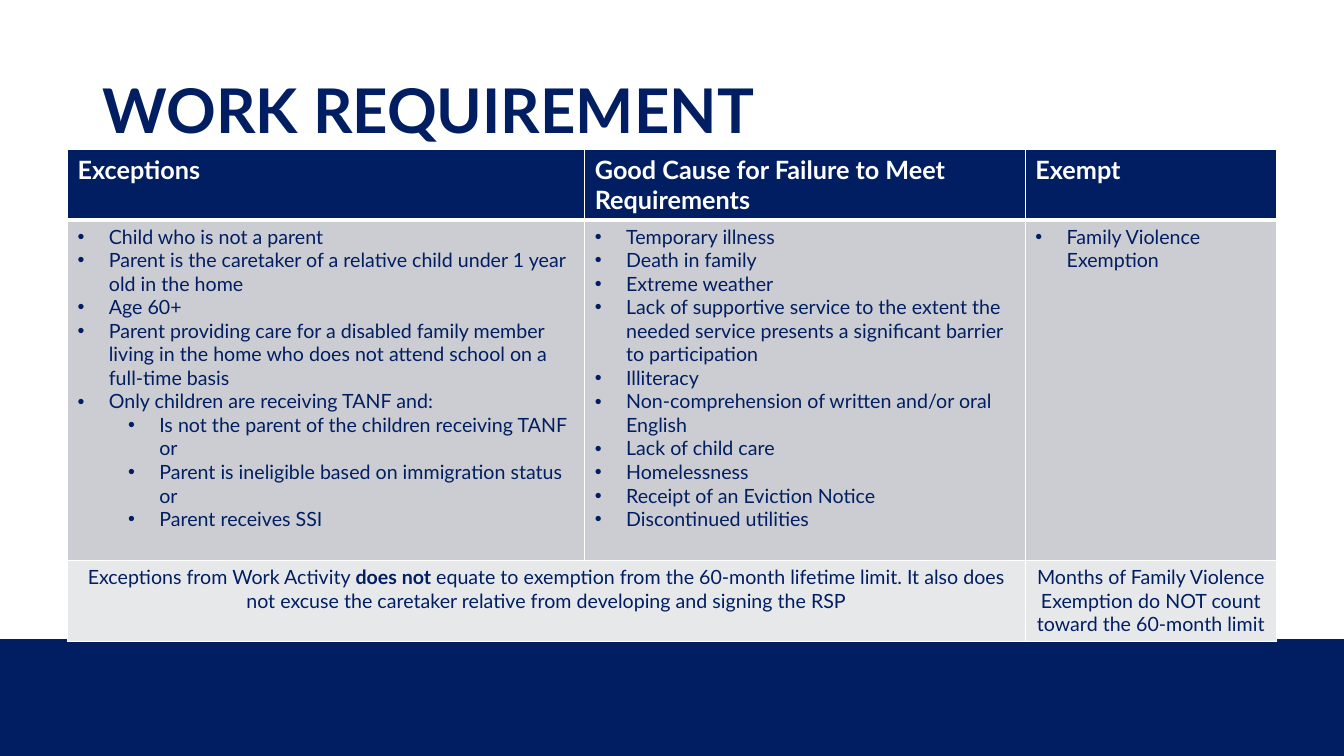
from lxml.etree import SubElement
from pptx import Presentation
from pptx.dml.color import RGBColor
from pptx.enum.shapes import MSO_SHAPE as Shape
from pptx.enum.text import MSO_ANCHOR as Anchor, PP_ALIGN as Align
from pptx.oxml.ns import qn
from pptx.util import Inches, Pt

COLORS = {"navy": "001E61", "white": "FFFFFF", "body": "CCCDD2", "note": "E7E8EA"}
FONT = "Lato"
WIDTH, HEIGHT = 13.33, 7.5
BAND_TOP = 6.34
TABLE_LEFT, TABLE_TOP = 0.67, 1.48
COLUMNS = [5.13, 4.37, 2.49]
ROWS = [0.69, 3.38, 0.8]
BULLET_INDENT, LEVEL_STEP = 0.31, 0.5

HEADINGS = ["Exceptions", "Good Cause for Failure to Meet Requirements", "Exempt"]
# Each item is a pair of level and text.
EXCEPTIONS = [
    (0, "Child who is not a parent"),
    (0, "Parent is the caretaker of a relative child under 1 year old in the home"),
    (0, "Age 60+"),
    (0, "Parent providing care for a disabled family member living in the home "
        "who does not attend school on a full-time basis"),
    (0, "Only children are receiving TANF and:"),
    (1, "Is not the parent of the children receiving TANF or"),
    (1, "Parent is ineligible based on immigration status or"),
    (1, "Parent receives SSI"),
]
GOOD_CAUSES = [(0, cause) for cause in (
    "Temporary illness",
    "Death in family",
    "Extreme weather",
    "Lack of supportive service to the extent the needed service presents "
    "a significant barrier to participation",
    "Illiteracy",
    "Non-comprehension of written and/or oral English",
    "Lack of child care",
    "Homelessness",
    "Receipt of an Eviction Notice",
    "Discontinued utilities",
)]
EXEMPTIONS = [(0, "Family Violence Exemption")]
# Each span is a pair of text and bold.
LIMIT_NOTE = [
    ("Exceptions from Work Activity ", False),
    ("does not ", True),
    ("equate to exemption from the 60-month lifetime limit. It also does not "
     "excuse the caretaker relative from developing and signing the RSP", False),
]
VIOLENCE_NOTE = [
    ("Months of Family Violence Exemption do NOT count toward the 60-month limit", False),
]


def color(name):
    return RGBColor.from_string(COLORS[name])


def add_span(para, text, size=14, ink="navy", bold=False):
    span = para.add_run()
    span.text = text
    font = span.font
    font.name, font.size, font.bold = FONT, Pt(size), bold
    font.color.rgb = color(ink)


def add_bullet(para, level):
    para.level = level
    props = para._p.get_or_add_pPr()
    props.set("marL", str(Inches(BULLET_INDENT + level * LEVEL_STEP)))
    props.set("indent", str(Inches(-BULLET_INDENT)))
    SubElement(props, qn("a:buFont"), typeface="Arial")
    SubElement(props, qn("a:buChar"), char="•")


def style_cell(cell, fill, top=1, bottom=1):
    """Give the cell white borders, in points, and a solid fill."""
    props = cell._tc.get_or_add_tcPr()
    for side, points in (("L", 1), ("R", 1), ("T", top), ("B", bottom)):
        line = SubElement(props, qn(f"a:ln{side}"), w=str(Pt(points)))
        paint = SubElement(line, qn("a:solidFill"))
        SubElement(paint, qn("a:srgbClr"), val=COLORS["white"])
    cell.fill.solid()
    cell.fill.fore_color.rgb = color(fill)


def fill_list(cell, items):
    frame = cell.text_frame
    for index, (level, text) in enumerate(items):
        para = frame.add_paragraph() if index else frame.paragraphs[0]
        add_bullet(para, level)
        add_span(para, text)


def fill_note(cell, spans):
    para = cell.text_frame.paragraphs[0]
    para.alignment = Align.CENTER
    for text, bold in spans:
        add_span(para, text, bold=bold)


def add_band(page):
    band = page.shapes.add_shape(Shape.RECTANGLE, 0, Inches(BAND_TOP),
                                 Inches(WIDTH), Inches(HEIGHT - BAND_TOP))
    band.shadow.inherit = False
    band.fill.solid()
    band.fill.fore_color.rgb = color("navy")
    band.line.fill.background()


def add_title(page, text):
    box = page.shapes.add_textbox(Inches(0.92), Inches(0.4), Inches(11.5), Inches(1.45))
    frame = box.text_frame
    frame.word_wrap = True
    frame.vertical_anchor = Anchor.MIDDLE
    para = frame.paragraphs[0]
    para.line_spacing = 0.9
    add_span(para, text, size=44, bold=True)


def add_requirement_table(page):
    table = page.shapes.add_table(
        len(ROWS), len(COLUMNS), Inches(TABLE_LEFT), Inches(TABLE_TOP),
        Inches(sum(COLUMNS)), Inches(sum(ROWS))).table
    table.horz_banding = False
    for column, width in zip(table.columns, COLUMNS):
        column.width = Inches(width)
    for row, height in zip(table.rows, ROWS):
        row.height = Inches(height)

    lists = [EXCEPTIONS, GOOD_CAUSES, EXEMPTIONS]
    for index, (heading, items) in enumerate(zip(HEADINGS, lists)):
        head, body, note = (table.cell(row, index) for row in range(len(ROWS)))
        style_cell(head, "navy", bottom=3)
        style_cell(body, "body", top=3)
        style_cell(note, "note")
        add_span(head.text_frame.paragraphs[0], heading, size=18, ink="white", bold=True)
        fill_list(body, items)

    table.cell(2, 0).merge(table.cell(2, 1))
    fill_note(table.cell(2, 0), LIMIT_NOTE)
    fill_note(table.cell(2, 2), VIOLENCE_NOTE)


def main():
    deck = Presentation()
    deck.slide_width, deck.slide_height = Inches(WIDTH), Inches(HEIGHT)
    page = deck.slides.add_slide(deck.slide_layouts[6])
    add_band(page)
    add_title(page, "WORK REQUIREMENT")
    add_requirement_table(page)
    deck.save("out.pptx")


if __name__ == "__main__":
    main()
